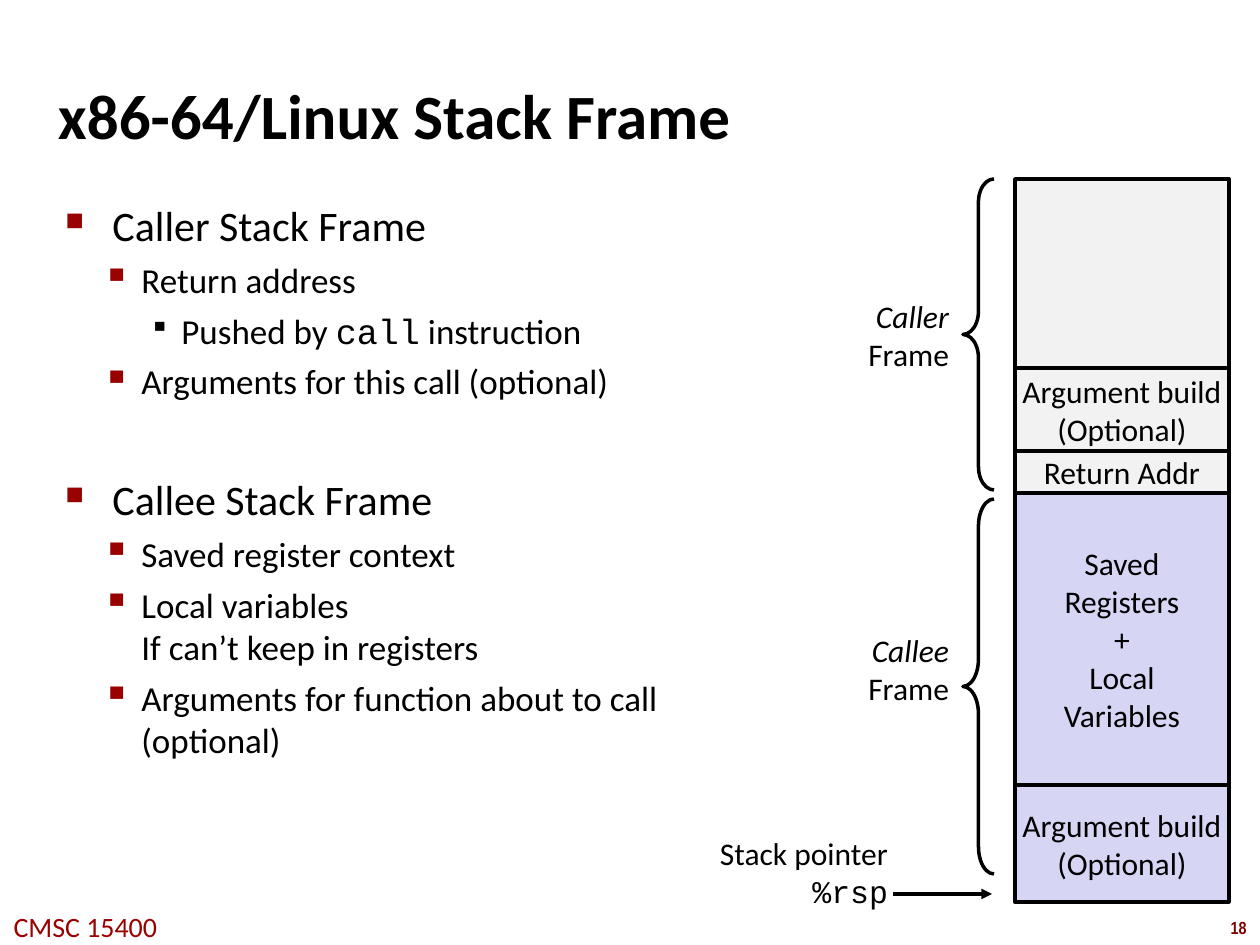
"""Build the x86-64/Linux stack frame slide."""
from dataclasses import dataclass

import pptx
import pptx.dml.color
import pptx.enum.shapes
import pptx.enum.text
import pptx.oxml
import pptx.oxml.ns
import pptx.util

ALIGN = pptx.enum.text.PP_ALIGN
ANCHOR = pptx.enum.text.MSO_ANCHOR
SHAPE = pptx.enum.shapes.MSO_SHAPE
PX = 914400 // 126


@dataclass(frozen=True)
class Theme:
    ink: str = "000000"
    accent: str = "990000"
    number: str = "800000"
    caller: str = "F2F2F2"
    callee: str = "D6D6F4"
    font: str = "Calibri"
    code: str = "Courier New"
    narrow: str = "Arial Narrow"
    title: int = 36
    heading: int = 24
    item: int = 20
    label: int = 18
    footer: int = 16
    page: int = 10
    line: int = 2


THEME = Theme()

TITLE = "x86-64/Linux Stack Frame"
OUTLINE = [
    (0, [("Caller Stack Frame", "")]),
    (1, [("Return address", "")]),
    (2, [("Pushed by ", ""), ("call", "code"), (" instruction", "")]),
    (1, [("Arguments for this call (optional)", "")]),
    (0, [("Callee Stack Frame", "")]),
    (1, [("Saved register context", "")]),
    (1, [("Local variables\nIf can’t keep in registers", "")]),
    (1, [("Arguments for function about to call (optional)", "")]),
]
LEVELS = [
    dict(margin=47, hang=47, before=6, size=THEME.heading, mark="■", color=THEME.accent, scale=60),
    dict(margin=76, hang=39, before=5, size=THEME.item, mark="▪", color=THEME.accent, scale=110),
    dict(margin=116, hang=32, before=5, size=THEME.item, mark="▪", color=THEME.ink, scale=80),
]
SECTION_GAP = 41
STACK_LEFT, STACK_TOP, STACK_WIDTH = 1015, 179, 214
STACK = [
    (189, THEME.caller, []),
    (83, THEME.caller, ["Argument build", "(Optional)"]),
    (42, THEME.caller, ["Return Addr"]),
    (292, THEME.callee, ["Saved", "Registers", "+", "Local", "Variables"]),
    (117, THEME.callee, ["Argument build", "(Optional)"]),
]
FRAMES = [("Caller", 179, 311, 292, 0.75), ("Callee", 499, 375, 626, 0.88)]
FOOTERS = [
    ("CMSC 15400", (-4, 903, 179, 47), THEME.footer, THEME.font, THEME.accent, False),
    ("18", (1217, 911, 43, 34), THEME.page, THEME.narrow, THEME.number, True),
]


def px(*lengths):
    return [length * PX for length in lengths]


def rgb(color):
    return pptx.dml.color.RGBColor.from_string(color)


def add_span(para, words, size, style="", font=THEME.font, color=THEME.ink):
    for index, part in enumerate(words.split("\n")):
        if index:
            para.add_line_break()
        span = para.add_run()
        span.text = part
        span.font.name = THEME.code if style == "code" else font
        span.font.size = pptx.util.Pt(size)
        span.font.bold = style == "bold"
        span.font.italic = style == "italic"
        span.font.color.rgb = rgb(color)


def set_frame(box, inset=None, wrap=True, anchor=ANCHOR.TOP):
    frame = box.text_frame
    frame.word_wrap = wrap
    frame.vertical_anchor = anchor
    if inset is not None:
        frame.margin_left = frame.margin_right = inset * PX
        frame.margin_top = frame.margin_bottom = inset * PX
    return frame


def add_lines(frame, lines, align):
    for index, (words, style) in enumerate(lines):
        para = frame.add_paragraph() if index else frame.paragraphs[0]
        para.alignment = align
        add_span(para, words, THEME.label, style)


def add_child(parent, tag, **attributes):
    child = pptx.oxml.parse_xml(f"<a:{tag} {pptx.oxml.ns.nsdecls('a')}/>")
    for name, value in attributes.items():
        child.set(name, str(value))
    parent.append(child)
    return child


def set_indent(para, margin, hang):
    properties = para._p.get_or_add_pPr()
    properties.set("marL", str(margin * PX))
    properties.set("indent", str(-hang * PX))
    return properties


def set_line(item):
    item.line.color.rgb = rgb(THEME.ink)
    item.line.width = pptx.util.Pt(THEME.line)


def add_shape(page, kind, place, fill=None):
    shape = page.shapes.add_shape(kind, *px(*place))
    shape.shadow.inherit = False
    if fill:
        shape.fill.solid()
        shape.fill.fore_color.rgb = rgb(fill)
    else:
        shape.fill.background()
    set_line(shape)
    return shape


def add_title(page):
    box = page.shapes.add_textbox(*px(53, 35, 1155, 158))
    para = set_frame(box, 5, anchor=ANCHOR.MIDDLE).paragraphs[0]
    set_indent(para, 16, 16)
    add_span(para, TITLE, THEME.title, "bold")


def add_outline(page):
    frame = set_frame(page.shapes.add_textbox(*px(53, 193, 741, 748)))
    for index, (depth, spans) in enumerate(OUTLINE):
        level = LEVELS[depth]
        para = frame.add_paragraph() if index else frame.paragraphs[0]
        para.level = depth
        properties = set_indent(para, level["margin"], level["hang"])
        add_child(add_child(properties, "buClr"), "srgbClr", val=level["color"])
        add_child(properties, "buSzPct", val=level["scale"] * 1000)
        add_child(properties, "buChar", char=level["mark"])
        if index:
            para.space_before = pptx.util.Pt(level["before"] if depth else SECTION_GAP)
        for words, style in spans:
            add_span(para, words, level["size"], style)


def add_stack(page):
    top = STACK_TOP
    for height, fill, lines in STACK:
        cell = add_shape(page, SHAPE.RECTANGLE, (STACK_LEFT, top, STACK_WIDTH, height), fill)
        frame = set_frame(cell, 0, anchor=ANCHOR.MIDDLE)
        add_lines(frame, [(words, "") for words in lines], ALIGN.CENTER)
        top += height


def add_frames(page):
    for name, top, height, label_top, curve in FRAMES:
        brace = add_shape(page, SHAPE.LEFT_BRACE, (963, top, 31, height))
        brace.adjustments[0] = curve
        box = page.shapes.add_textbox(*px(859, label_top, 95, 87))
        add_lines(set_frame(box, 5, wrap=False), [(name, "italic"), ("Frame", "")], ALIGN.RIGHT)


def add_pointer(page):
    box = page.shapes.add_textbox(*px(689, 829, 204, 84))
    add_lines(set_frame(box, 5), [("Stack pointer", ""), ("%rsp", "code")], ALIGN.RIGHT)
    kind = pptx.enum.shapes.MSO_CONNECTOR.STRAIGHT
    arrow = page.shapes.add_connector(kind, *px(893, 894, 992, 894))
    set_line(arrow)
    add_child(arrow.line._get_or_add_ln(), "tailEnd", type="triangle")
    add_child(arrow._element.spPr, "effectLst")


def add_footers(page):
    for words, place, size, font, color, bold in FOOTERS:
        para = set_frame(page.shapes.add_textbox(*px(*place)), wrap=False).paragraphs[0]
        para.alignment = ALIGN.CENTER
        add_span(para, words, size, "bold" if bold else "", font, color)


def main():
    deck = pptx.Presentation()
    deck.slide_width, deck.slide_height = px(1260, 945)
    page = deck.slides.add_slide(deck.slide_layouts[6])
    for add_part in (add_footers, add_title, add_outline, add_stack, add_frames, add_pointer):
        add_part(page)
    deck.save("out.pptx")


if __name__ == "__main__":
    main()
